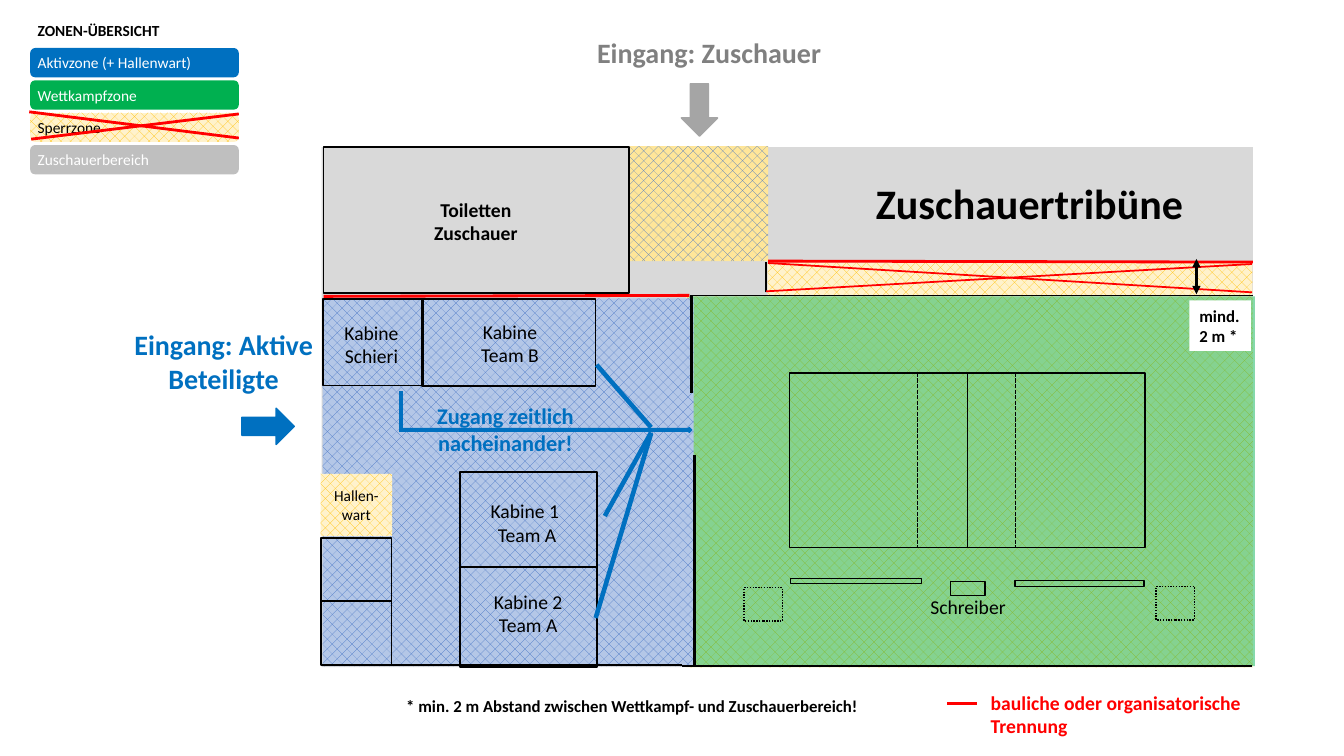
from lxml import etree
from pptx import Presentation
from pptx.dml.color import RGBColor
from pptx.enum.dml import MSO_LINE, MSO_PATTERN
from pptx.enum.shapes import MSO_CONNECTOR, MSO_SHAPE
from pptx.enum.text import MSO_ANCHOR, PP_ALIGN
from pptx.oxml.ns import qn
from pptx.util import Pt

BLACK = RGBColor(0x00, 0x00, 0x00)
WHITE = RGBColor(0xFF, 0xFF, 0xFF)
RED = RGBColor(0xFF, 0x00, 0x00)
BLUE = RGBColor(0x00, 0x70, 0xC0)
GREEN = RGBColor(0x00, 0xB0, 0x50)
ROOM_BLUE = RGBColor(0x44, 0x72, 0xC4)
PALE_BLUE = RGBColor(0xB4, 0xC7, 0xE7)
AMBER = RGBColor(0xFF, 0xC0, 0x00)
PALE_AMBER = RGBColor(0xFF, 0xF2, 0xCC)
SAND = RGBColor(0xFF, 0xE6, 0x99)
FLOOR_GRAY = RGBColor(0xD9, 0xD9, 0xD9)
ZONE_GRAY = RGBColor(0xBF, 0xBF, 0xBF)
ARROW_GRAY = RGBColor(0xA5, 0xA5, 0xA5)
TEXT_GRAY = RGBColor(0x80, 0x80, 0x80)

RECTANGLE = MSO_SHAPE.RECTANGLE
ROUNDED = MSO_SHAPE.ROUNDED_RECTANGLE
RIGHT_ARROW = MSO_SHAPE.RIGHT_ARROW
DOWN_ARROW = MSO_SHAPE.DOWN_ARROW
STRAIGHT = MSO_CONNECTOR.STRAIGHT
HATCH = MSO_PATTERN.PERCENT_30
DASHED = MSO_LINE.SQUARE_DOT
DOTTED = MSO_LINE.ROUND_DOT
MIDDLE = MSO_ANCHOR.MIDDLE
LEFT = PP_ALIGN.LEFT
CENTER = PP_ALIGN.CENTER

BLOCKED = (AMBER, PALE_AMBER)
ACTIVE = (ROOM_BLUE, PALE_BLUE)
ENTRANCE = (ROOM_BLUE, SAND)

LEGEND = [
    ("ZONEN-ÜBERSICHT", WHITE, BLACK, True),
    ("Aktivzone (+ Hallenwart)", BLUE, WHITE, False),
    ("Wettkampfzone", GREEN, WHITE, False),
    ("Sperrzone", BLOCKED, BLACK, False),
    ("Zuschauerbereich", ZONE_GRAY, WHITE, False),
]
LEGEND_LEFT, LEGEND_TOP, LEGEND_STEP = 21.6, 11.2, 23.1
LEGEND_WIDTH, LEGEND_HEIGHT, LEGEND_INSET = 149, 20.9, 4.3

COMPETITION_BOX = (491.8, 211.7, 404.6, 264.2)
ZONES = [
    ((229.7, 105.1, 665.3, 371.5), FLOOR_GRAY),
    ((490.3, 211.7, 404.6, 265), BLOCKED),
    (COMPETITION_BOX, GREEN),
    ((230.4, 213.1, 265, 262.8), ACTIVE),
    ((449.3, 104.4, 99.4, 82.1), ENTRANCE),
    ((548.3, 187.6, 346.3, 23), BLOCKED),
]
COMPETITION_ALPHA = 48000

COURT_LEFT, COURT_TOP, COURT_WIDTH, COURT_HEIGHT = 563.8, 266.4, 254.2, 124.6
COURT_BOTTOM = COURT_TOP + COURT_HEIGHT
COURT_LINES = [(655.2, DASHED), (691.2, None), (725.4, DASHED)]

OUTLINES = [
    ((COURT_LEFT, COURT_TOP, COURT_WIDTH, COURT_HEIGHT), 1, None),
    ((679, 415.4, 24.5, 10.1), 1, None),
    ((725, 414.7, 92.2, 4.3), 1, None),
    ((564.5, 413.3, 93.6, 3.6), 1, None),
    ((531.4, 419.8, 27.4, 23.8), 1, DOTTED),
    ((825.8, 419, 27.4, 23.8), 1, DOTTED),
    ((229.3, 384.1, 50.4, 45.4), 1.25, None),
    ((229.3, 429.5, 50.4, 45.4), 1.25, None),
    ((328.7, 337.3, 97.9, 67.7), 1.25, None),
    ((328.7, 405, 97.9, 71.3), 1.25, None),
    ((230.8, 213.5, 71.3, 61.9), 1.25, None),
    ((301.7, 213.8, 123.8, 61.9), 1.25, None),
    ((231.1, 105.1, 218.2, 104.4), 1.25, None),
]

LABELS = [
    ("Schreiber", (657.4, 421.2, 68.4, 24.5), 14, False, BLACK, LEFT, None),
    ("Kabine 1 \vTeam A", (327.6, 352.8, 97.9, 41), 14, False, BLACK, CENTER, None),
    ("Kabine 2\nTeam A", (338.4, 417.6, 77.8, 41), 14, False, BLACK, CENTER, None),
    ("Kabine Team B", (325.4, 224.6, 77.8, 41), 14, False, BLACK, CENTER, None),
    ("Kabine Schieri", (233.3, 225.4, 64.1, 41), 14, False, BLACK, CENTER, None),
    ("Toiletten Zuschauer", (301, 137.5, 77.8, 41), 14, True, BLACK, CENTER, None),
    ("Hallen-wart", (229, 338.4, 51.1, 44.6), 11, False, BLACK, CENTER, BLOCKED),
    ("Zuschauertribüne", (616.3, 123.1, 238.3, 43.9), 30, True, BLACK, CENTER, None),
    ("Eingang: Zuschauer", (413.3, 21.6, 186.5, 31.7), 20, True, TEXT_GRAY, CENTER, WHITE),
    ("Eingang: Aktive Beteiligte", (87.8, 230.4, 144, 55.4), 20, True, BLUE, CENTER, None),
    ("Zugang zeitlich nacheinander!", (277.9, 283.7, 166.3, 46.1), 16, True, BLUE, CENTER, None),
    ("bauliche oder organisatorische Trennung", (700.6, 489.6, 221, 41), 14, True, RED, LEFT, None),
    ("* min. 2 m Abstand zwischen Wettkampf- und Zuschauerbereich!",
     (283, 493.2, 351, 21.6), 12, True, BLACK, LEFT, None),
    ("mind. 2 m *", (849.6, 214.6, 43.9, 36), 12, True, BLACK, LEFT, WHITE),
]

LINES = [
    ((894.2, 475.9, 487.4, 475.9), BLACK, 1.25),
    ((487.4, 475.2, 271.4, 475.2), BLACK, 1.25),
    ((170.6, 81.4, 22.3, 99.4), RED, 2),
    ((170.6, 98.6, 20.9, 79.9), RED, 2),
    ((492.5, 211, 231.1, 211.7), RED, 2),
    ((493.9, 211, 493.9, 280.8), BLACK, 2),
    ((496.1, 324.7, 496.1, 475.2), BLACK, 2),
    ((697.7, 502.6, 676.1, 502.6), RED, 2),
    ((895, 187.2, 548.6, 186.5), RED, 2),
    ((895, 211, 493.2, 211), BLACK, 1.25),
    ((547.2, 208.8, 547.2, 187.2), BLACK, 2),
    ((894.2, 208.8, 548.6, 187.9), RED, 1.25),
    ((894.2, 188.6, 547.2, 208.1), RED, 1.25),
    ((426.2, 260.6, 465.1, 305.3), BLUE, 3.25),
    ((286.6, 279.4, 286.6, 308.9), BLUE, 3.25),
    ((465.1, 308.9, 432, 368.6), BLUE, 3.25),
    ((465.1, 309.6, 425.5, 441.4), BLUE, 3.25),
]
DISTANCE_LINE = (854.6, 185, 854.6, 210.2)

ARROWS = [
    (RIGHT_ARROW, (172.8, 291.6, 37.4, 25.9), BLUE),
    (DOWN_ARROW, (486.7, 59.8, 25.9, 37.4), ARROW_GRAY),
    (RIGHT_ARROW, (286.6, 305.3, 207.4, 3.6), BLUE),
]


def points(values):
    return [Pt(value) for value in values]


def paint(shape, fill):
    if fill is None:
        shape.fill.background()
    elif isinstance(fill, RGBColor):
        shape.fill.solid()
        shape.fill.fore_color.rgb = fill
    else:
        shape.fill.patterned()
        shape.fill.pattern = HATCH
        shape.fill.fore_color.rgb, shape.fill.back_color.rgb = fill


def stroke(line, color, width, dash=None):
    line.color.rgb = color
    line.width = Pt(width)
    if dash is not None:
        line.dash_style = dash


def add_box(slide, kind, box, fill=None):
    shape = slide.shapes.add_shape(kind, *points(box))
    shape.shadow.inherit = False
    paint(shape, fill)
    shape.line.fill.background()
    return shape


def write(shape, text, size, bold, color, alignment, inset=7.2):
    frame = shape.text_frame
    margins = {"margin_left": Pt(inset), "margin_right": Pt(inset),
               "word_wrap": True, "vertical_anchor": MIDDLE}
    for name, value in margins.items():
        setattr(frame, name, value)
    frame.text = text
    formats = {"name": "Calibri", "size": Pt(size), "bold": bold}
    for paragraph in frame.paragraphs:
        paragraph.alignment = alignment
        for run in paragraph.runs:
            for name, value in formats.items():
                setattr(run.font, name, value)
            run.font.color.rgb = color


def add_line(slide, ends, color, width, dash=None):
    connector = slide.shapes.add_connector(STRAIGHT, *points(ends))
    stroke(connector.line, color, width, dash)
    etree.SubElement(connector._element.spPr, qn("a:effectLst"))
    return connector


def main():
    presentation = Presentation()
    presentation.slide_width, presentation.slide_height = Pt(960), Pt(540)
    slide = presentation.slides.add_slide(presentation.slide_layouts[6])

    for box, fill in ZONES:
        zone = add_box(slide, RECTANGLE, box, fill)
        if box == COMPETITION_BOX:
            color = zone._element.spPr.find(qn("a:solidFill"))[0]
            etree.SubElement(color, qn("a:alpha"), val=str(COMPETITION_ALPHA))
    for box, width, dash in OUTLINES:
        stroke(add_box(slide, RECTANGLE, box).line, BLACK, width, dash)
    for x, dash in COURT_LINES:
        add_line(slide, (x, COURT_TOP, x, COURT_BOTTOM), BLACK, 1, dash)
    for index, (text, fill, color, bold) in enumerate(LEGEND):
        top = LEGEND_TOP + index * LEGEND_STEP
        entry = add_box(slide, ROUNDED, (LEGEND_LEFT, top, LEGEND_WIDTH, LEGEND_HEIGHT), fill)
        write(entry, text, 11, bold, color, LEFT, LEGEND_INSET)
    for text, box, size, bold, color, alignment, fill in LABELS:
        label = slide.shapes.add_textbox(*points(box))
        paint(label, fill)
        write(label, text, size, bold, color, alignment)
    for ends, color, width in LINES:
        add_line(slide, ends, color, width)
    distance = add_line(slide, DISTANCE_LINE, BLACK, 1.75)
    for end in ("a:headEnd", "a:tailEnd"):
        etree.SubElement(distance.line._get_or_add_ln(), qn(end), type="triangle")
    for kind, box, color in ARROWS:
        stroke(add_box(slide, kind, box, color).line, color, 1)

    presentation.save("out.pptx")


if __name__ == "__main__":
    main()
